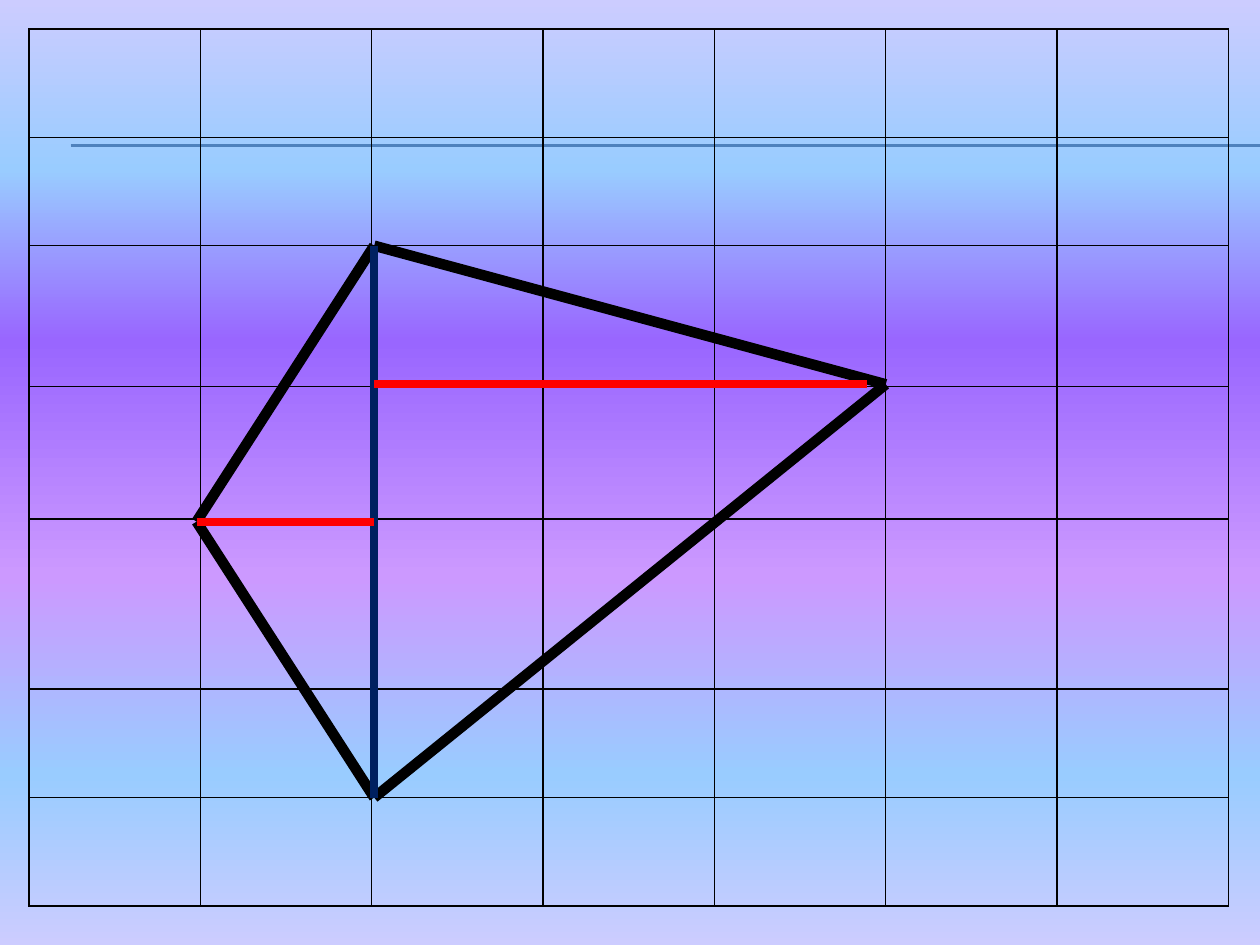
"""Builds a slide with a quadrilateral, its diagonal and heights on a grid."""
import dataclasses

import lxml.etree
import pptx
import pptx.dml.color
import pptx.enum.shapes
import pptx.oxml.ns
import pptx.util

Inches = pptx.util.Inches
Pt = pptx.util.Pt
qn = pptx.oxml.ns.qn


@dataclasses.dataclass(frozen=True)
class Theme:
    """Colours, font and line widths of the slide."""
    backdrop: tuple = ((0, "CCCCFF"), (18, "99CCFF"), (36, "9966FF"),
                       (61, "CC99FF"), (82, "99CCFF"), (100, "CCCCFF"))
    rule: str = "4F81BD"
    outline: str = "000000"
    diagonal: str = "002060"
    height: str = "FF0000"
    font: str = "Calibri"
    font_size: float = 18
    rule_width: float = 0.75
    grid_width: float = 1
    outline_width: float = 6
    inner_width: float = 4.5


class SlideBuilder:
    """Draws styled elements on the current slide."""

    def __init__(self, page, theme):
        self.page = page
        self.theme = theme

    def background(self):
        """Fill the page with the vertical gradient."""
        fill = self.page.background.fill
        fill.gradient()
        fill.gradient_angle = 270
        stops = next(self.page.element.iter(qn("a:gsLst")))
        for stop in list(stops):
            stops.remove(stop)
        for position, color in self.theme.backdrop:
            stop = lxml.etree.SubElement(stops, qn("a:gs"), pos=str(position * 1000))
            lxml.etree.SubElement(stop, qn("a:srgbClr"), val=color)

    def line(self, start, end, color, width):
        """Draw a straight line between two points."""
        connector = self.page.shapes.add_connector(
            pptx.enum.shapes.MSO_CONNECTOR.STRAIGHT,
            *(Inches(value) for value in (*start, *end)))
        connector.line.color.rgb = pptx.dml.color.RGBColor.from_string(color)
        connector.line.width = Pt(width)
        properties = connector.element.find(qn("p:spPr"))
        lxml.etree.SubElement(properties, qn("a:effectLst"))

    def grid(self, left, top, column_width, columns, row_heights):
        """Add an empty table with all borders drawn."""
        table = self.page.shapes.add_table(
            len(row_heights), columns, Inches(left), Inches(top),
            Inches(column_width * columns), Inches(sum(row_heights))).table
        table.first_row = False
        table.horz_banding = False
        for column in table.columns:
            column.width = Inches(column_width)
        for row, height in zip(table.rows, row_heights):
            row.height = Inches(height)
        for cell in table.iter_cells():
            self.borders(cell)
            cell.fill.background()
            font = cell.text_frame.paragraphs[0].font
            font.name = self.theme.font
            font.size = Pt(self.theme.font_size)

    def borders(self, cell):
        """Draw the four borders of a table cell."""
        properties = cell._tc.get_or_add_tcPr()
        for side in ("lnL", "lnR", "lnT", "lnB"):
            border = lxml.etree.SubElement(
                properties, qn(f"a:{side}"), w=str(Pt(self.theme.grid_width)))
            fill = lxml.etree.SubElement(border, qn("a:solidFill"))
            lxml.etree.SubElement(fill, qn("a:srgbClr"), val=self.theme.outline)


def main():
    """Build and save the deck."""
    deck = pptx.Presentation()
    deck.slide_width = Inches(10)
    deck.slide_height = Inches(7.5)
    theme = Theme()
    builder = SlideBuilder(deck.slides.add_slide(deck.slide_layouts[6]), theme)
    builder.background()
    for y in (1.15, 1.16):
        builder.line((0.56, y), (10, y), theme.rule, theme.rule_width)
    builder.grid(0.23, 0.23, 1.36, 7, (0.86, 0.86, 1.12, 1.05, 1.35, 0.86, 0.86))

    left, top, right, bottom = (1.56, 4.14), (2.97, 1.95), (7.03, 3.05), (2.97, 6.33)
    for start, end in ((left, top), (top, right), (left, bottom), (bottom, right)):
        builder.line(start, end, theme.outline, theme.outline_width)
    builder.line(top, bottom, theme.diagonal, theme.inner_width)
    builder.line((top[0], right[1]), (6.88, right[1]), theme.height, theme.inner_width)
    builder.line(left, (top[0], left[1]), theme.height, theme.inner_width)
    deck.save("out.pptx")


if __name__ == "__main__":
    main()
